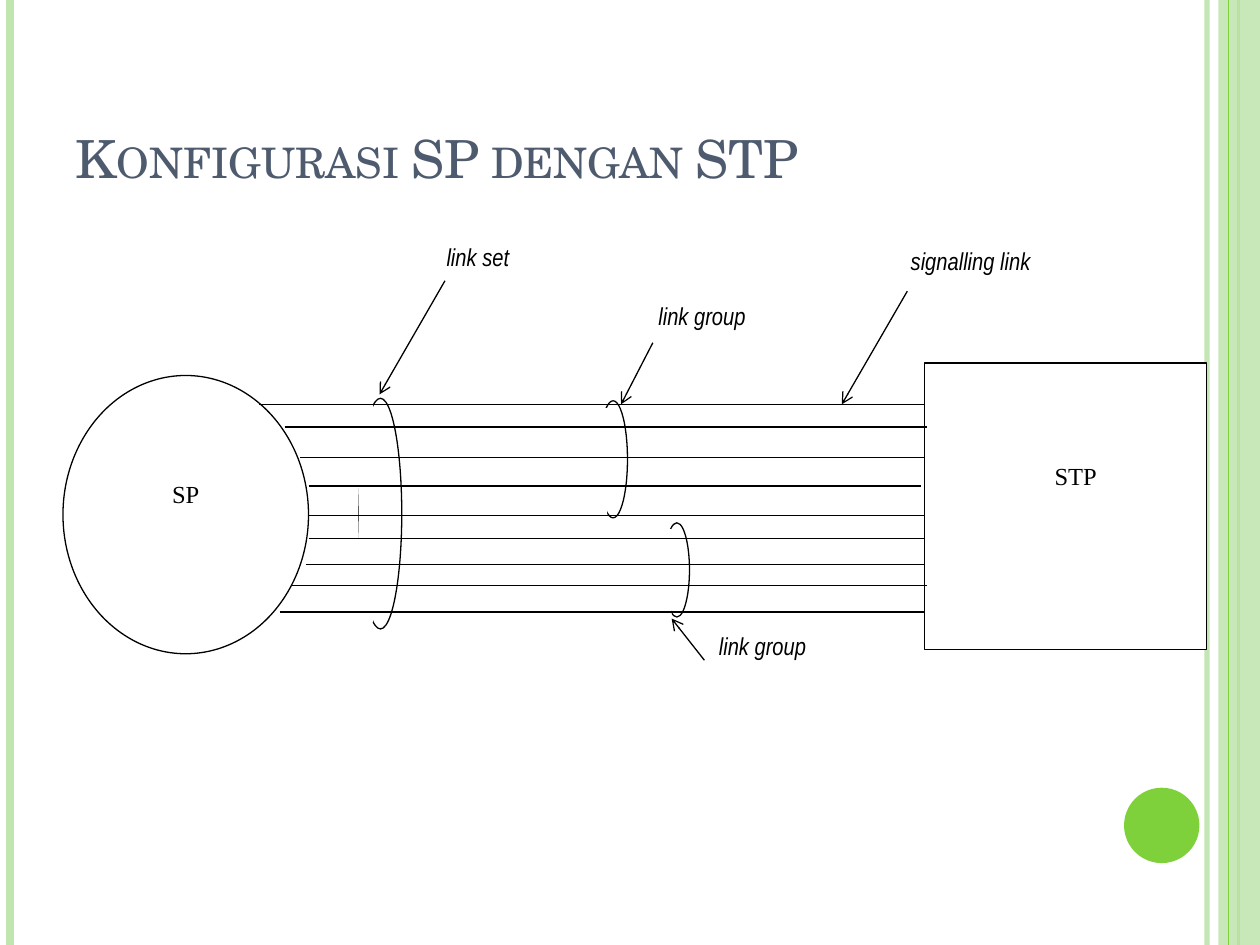
from dataclasses import dataclass

from lxml import etree
from pptx import Presentation
from pptx import util as u
from pptx.dml.color import RGBColor
from pptx.enum import shapes, text
from pptx.oxml.ns import qn

OVAL, RECT = shapes.MSO_SHAPE.OVAL, shapes.MSO_SHAPE.RECTANGLE
LEFT, MID = text.PP_ALIGN.LEFT, text.PP_ALIGN.CENTER
WIDE, HIGH = 25.4, 19.05


@dataclass
class Theme:
    ink: str = "000000"
    paper: str = "FFFFFF"
    head: str = "4E5B6F"
    green: str = "7FD13B"
    pale: str = "C0E5AF"
    title: tuple = ("TeX Gyre Schola", 30)
    label: tuple = ("Arial Narrow", 14)
    node: tuple = ("Times New Roman", 14)
    thin: float = 0.75


def put(item, **vals):
    for key, val in vals.items():
        setattr(item, key, val)


def fade(fill, part):
    """Set the opacity, in percent, of a solid fill element."""
    etree.SubElement(fill[0], qn("a:alpha"), val=str(part * 1000))


class Board:
    def __init__(self, slide, theme):
        self.slide, self.theme = slide, theme

    def style(self, run, face, color, **more):
        name, size = face
        put(run.font, name=name, size=u.Pt(size), **more)
        run.font.color.rgb = RGBColor.from_string(color)

    def title(self, words, *box):
        head = self.slide.shapes.title
        put(head, **dict(zip(("left", "top", "width", "height"), map(u.Cm, box))))
        frame = head.text_frame
        put(frame, vertical_anchor=text.MSO_ANCHOR.BOTTOM, word_wrap=True)
        para = frame.paragraphs[0]
        para.alignment = LEFT
        run = para.add_run()
        run.text = words
        self.style(run, self.theme.title, self.theme.head)
        run.font._element.set("cap", "small")

    def shape(self, kind, box, fill, line=None, alpha=None):
        form = self.slide.shapes.add_shape(kind, *map(u.Cm, box))
        form.shadow.inherit = False
        form.fill.solid()
        form.fill.fore_color.rgb = RGBColor.from_string(fill)
        if alpha:
            fade(form._element.spPr.find(qn("a:solidFill")), alpha)
        if line:
            form.line.color.rgb = RGBColor.from_string(line)
            form.line.width = u.Pt(self.theme.thin)
        else:
            form.line.fill.background()

    def line(self, ends, color=None, width=None, arrow=False, alpha=None):
        wire = self.slide.shapes.add_connector(
            shapes.MSO_CONNECTOR.STRAIGHT, *map(u.Cm, ends))
        wire.line.color.rgb = RGBColor.from_string(color or self.theme.ink)
        wire.line.width = u.Pt(width or self.theme.thin)
        props = wire._element.spPr
        edge = props.find(qn("a:ln"))
        if alpha:
            fade(edge.find(qn("a:solidFill")), alpha)
        if arrow:
            etree.SubElement(edge, qn("a:tailEnd"), type="arrow")
        etree.SubElement(props, qn("a:effectLst"))

    def label(self, words, box, face, align=LEFT, after=0, italic=False):
        frame = self.slide.shapes.add_textbox(*map(u.Cm, box)).text_frame
        put(frame, word_wrap=True, margin_left=0, margin_right=0,
            margin_top=0, margin_bottom=0)
        para = frame.paragraphs[0]
        put(para, alignment=align, space_after=u.Pt(after))
        run = para.add_run()
        run.text = words
        self.style(run, face, self.theme.ink, italic=italic)

    def arc(self, oval, mask):
        """Draw an oval whose left part is covered, leaving an open bracket."""
        self.shape(OVAL, oval, self.theme.paper, self.theme.ink)
        self.shape(RECT, mask, self.theme.paper)

    def frame(self):
        """Draw the green edges and the disc."""
        look = self.theme
        for x, color, width, alpha in ((24.33, look.pale, 3, 93),
                                       (0.2, look.pale, 4.5, None),
                                       (24.97, look.green, 1.5, None)):
            self.line((x, 0, x, HIGH), color, width, alpha=alpha)
        self.shape(RECT, (24.56, 0, 0.84, HIGH), look.pale, alpha=87)
        self.line((24.77, 0, 24.77, HIGH), look.green)
        self.shape(OVAL, (22.66, 15.88, 1.52, 1.52), look.green)


ARCS = (
    ((13.39, 10.54, 0.51, 1.9), (13.34, 10.67, 0.2, 1.75)),
    ((12.07, 8.08, 0.58, 2.36), (12.01, 8.23, 0.23, 2.16)),
    ((7.24, 8.03, 0.86, 4.65), (7.24, 8.08, 0.28, 4.47)),
)
# Start x, end x and height of each signalling link
LINKS = (
    (5.23, 18.64, 8.15), (5.74, 18.69, 8.61), (6.05, 18.64, 9.22),
    (6.22, 18.57, 9.8), (6.22, 18.64, 10.39), (6.22, 18.64, 10.85),
    (6.17, 18.64, 11.38), (5.87, 18.69, 11.81), (5.64, 18.64, 12.34),
)
# Words, text box and arrow of each note
NOTES = (
    (" link group", (13.16, 6.07, 3.3, 1.3), (13.16, 6.91, 12.52, 8.15)),
    (" link set", (8.89, 4.88, 2.49, 1.22), (8.97, 5.66, 7.65, 7.95)),
    ("signalling link", (18.36, 4.95, 4.22, 1.22), (18.29, 5.87, 16.97, 8.15)),
    (" link group", (14.38, 12.73, 3.53, 1.17), (14.2, 13.31, 13.54, 12.47)),
)
# Shape, outline box, words and text box of each node
NODES = (
    (OVAL, (1.27, 7.57, 4.95, 5.61), "SP", (2.97, 9.65, 1.55, 1.4)),
    (RECT, (18.64, 7.32, 5.69, 5.77), "STP", (20.68, 9.3, 2.01, 1.4)),
)


def main():
    deck = Presentation()
    put(deck, slide_width=u.Cm(WIDE), slide_height=u.Cm(HIGH))
    look = Theme()
    board = Board(deck.slides.add_slide(deck.slide_layouts[5]), look)
    board.frame()
    board.title("Konfigurasi SP dengan STP", 1.27, 0.76, 20.75, 3.18)
    for oval, mask in ARCS:
        board.arc(oval, mask)
    for kind, box, words, place in NODES:
        board.shape(kind, box, look.paper, look.ink)
        board.label(words, place, look.node, MID)
    for start, end, y in LINKS:
        board.line((start, y, end, y))
    for words, box, ends in NOTES:
        board.label(words, box, look.label, after=10, italic=True)
        board.line(ends, arrow=True)
    deck.save("out.pptx")


if __name__ == "__main__":
    main()
